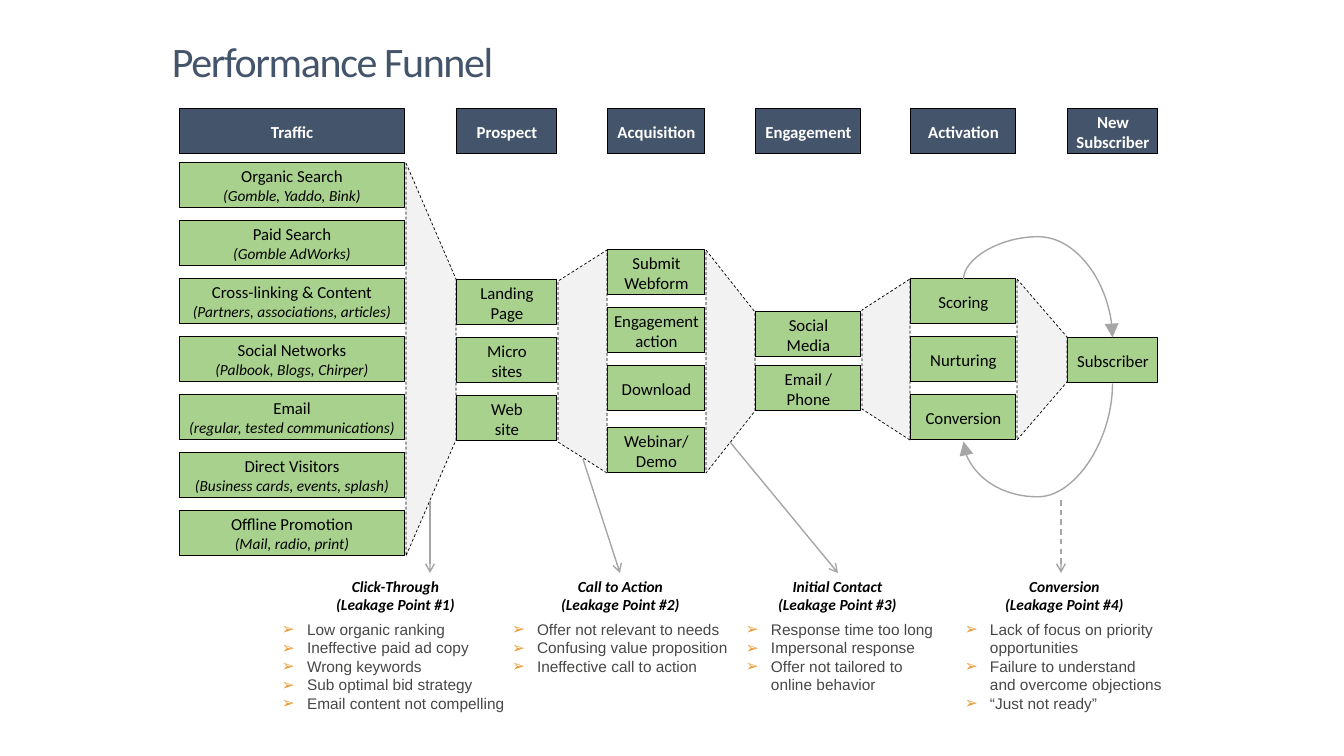
"""Builds the Performance Funnel slide: stage columns, funnels between them and leakage points."""
from lxml import etree
from pptx import Presentation
from pptx.dml.color import RGBColor
from pptx.enum.dml import MSO_LINE
from pptx.enum.shapes import MSO_CONNECTOR, MSO_SHAPE
from pptx.enum.text import MSO_ANCHOR, MSO_AUTO_SIZE, PP_ALIGN
from pptx.oxml.ns import qn
from pptx.util import Emu, Pt

RECT, TRAPEZOID = MSO_SHAPE.RECTANGLE, MSO_SHAPE.TRAPEZOID
STRAIGHT, CURVE = MSO_CONNECTOR.STRAIGHT, MSO_CONNECTOR.CURVE
TOP, MIDDLE, BOTTOM = MSO_ANCHOR.TOP, MSO_ANCHOR.MIDDLE, MSO_ANCHOR.BOTTOM
LEFT, CENTER = PP_ALIGN.LEFT, PP_ALIGN.CENTER
NO_FIT, DASH = MSO_AUTO_SIZE.NONE, MSO_LINE.DASH

EMU_PER_PX = 914400 / 100.8
BOX_HEIGHT, HEADER_TOP, CAPTION_TOP, LIST_TOP = 45, 109, 573, 615
THEME = {
    "header": "44546A", "step": "A9D18E", "funnel": "F2F2F2",
    "outline": "000000", "arrow": "A6A6A6", "bullet": "EB9931",
    "outline_width": Pt(0.75), "funnel_width": Pt(0.5), "arrow_width": Pt(1),
    "title_text": ("44546A", {"name": "Calibri", "size": Pt(30), "bold": False}),
    "header_text": ("FFFFFF", {"name": "Calibri", "size": Pt(12), "bold": True}),
    "step_text": ("000000", {"name": "Calibri", "size": Pt(12)}),
    "detail_text": ("000000", {"name": "Calibri", "size": Pt(11), "italic": True}),
    "caption_text": ("000000", {"name": "Calibri", "size": Pt(11), "bold": True, "italic": True}),
    "list_text": ("474746", {"name": "Arial", "size": Pt(11), "bold": False}),
}


def px(length):
    return Emu(round(length * EMU_PER_PX))


def write(shape, lines, style, anchor=MIDDLE, align=CENTER, inset=(10, 5)):
    frame = shape.text_frame
    frame.text = "\n".join(lines)
    across, down = map(px, inset)
    frame_format = {
        "word_wrap": True, "auto_size": NO_FIT, "vertical_anchor": anchor,
        "margin_left": across, "margin_right": across,
        "margin_top": down, "margin_bottom": down,
    }
    for attribute, value in frame_format.items():
        setattr(frame, attribute, value)
    for paragraph in frame.paragraphs:
        for attribute, value in {"alignment": align, "line_spacing": 1.0, "space_before": Pt(0)}.items():
            setattr(paragraph, attribute, value)
        detail = style == "step_text" and paragraph.text.startswith("(")
        color, font_format = THEME["detail_text" if detail else style]
        font = paragraph.runs[0].font
        font.color.rgb = RGBColor.from_string(color)
        for attribute, value in font_format.items():
            setattr(font, attribute, value)
    return frame.paragraphs


presentation = Presentation()
presentation.slide_width, presentation.slide_height = px(1344), px(756)
slide = presentation.slides.add_slide(presentation.slide_layouts.get_by_name("Comparison"))
title, *leak_lists = slide.placeholders
title.left, title.top, title.width, title.height = map(px, (162, 20, 840, 71))
title_line, = write(title, ["Performance Funnel"], "title_text", BOTTOM, LEFT)
title_line.runs[0]._r.get_or_add_rPr().set("spc", "-100")

stages = [
    ("Traffic", 179, 226, 0, range(163, 512, 58), [
        ["Organic Search", "(Gomble, Yaddo, Bink)"],
        ["Paid Search", "(Gomble AdWorks)"],
        ["Cross-linking & Content", "(Partners, associations, articles)"],
        ["Social Networks", "(Palbook, Blogs, Chirper)"],
        ["Email", "(regular, tested communications)"],
        ["Direct Visitors", "(Business cards, events, splash)"],
        ["Offline Promotion", "(Mail, radio, print)"]]),
    ("Prospect", 457, 100, 10, range(280, 397, 58),
     [["Landing", "Page"], ["Micro", "sites"], ["Web", "site"]]),
    ("Acquisition", 608, 97, 0, (250, 308, 366, 428),
     [["Submit", "Webform"], ["Engagement action"], ["Download"], ["Webinar/", "Demo"]]),
    ("Engagement", 756, 105, 10, (312, 366), [["Social Media"], ["Email / Phone"]]),
    ("Activation", 911, 105, 0, range(279, 396, 58), [["Scoring"], ["Nurturing"], ["Conversion"]]),
    ("New Subscriber", 1068, 90, 0, (338,), [["Subscriber"]]),
]
for stage, left, width, inset, tops, steps in stages:
    boxes = [(HEADER_TOP, [stage], "header", 0)]
    boxes += [(top, step, "step", inset) for top, step in zip(tops, steps)]
    for top, lines, role, side in boxes:
        box = slide.shapes.add_shape(RECT, px(left), px(top), px(width), px(BOX_HEIGHT))
        box.shadow.inherit = False
        box.fill.solid()
        box.fill.fore_color.rgb = RGBColor.from_string(THEME[role])
        box.line.color.rgb = RGBColor.from_string(THEME["outline"])
        box.line.width = THEME["outline_width"]
        write(box, lines, f"{role}_text", inset=(side, 0))

for before, after in zip(stages, stages[1:]):
    start, depth = before[1] + before[2] + 1, after[1] - before[1] - before[2] - 2
    heights = [stage[4][-1] + BOX_HEIGHT - stage[4][0] for stage in (before, after)]
    tall, short = max(heights), min(heights)
    tall_stage = before if heights[0] == tall else after
    middle = tall_stage[4][0] + tall / 2
    funnel = slide.shapes.add_shape(
        TRAPEZOID, px(start + depth / 2 - tall / 2), px(middle - depth / 2), px(tall), px(depth))
    funnel.rotation = 90 if tall_stage is before else 270
    funnel.adjustments[0] = (tall - short) / 2 / depth
    funnel.shadow.inherit = False
    funnel.fill.solid()
    funnel.fill.fore_color.rgb = RGBColor.from_string(THEME["funnel"])
    funnel.line.color.rgb = RGBColor.from_string(THEME["outline"])
    funnel.line.width = THEME["funnel_width"]
    funnel.line.dash_style = DASH

leaks = [
    (["Click-Through", "(Leakage Point #1)"], 305, 181, 272, 247,
     ["Low organic ranking", "Ineffective paid ad copy", "Wrong keywords",
      "Sub optimal bid strategy", "Email content not compelling"]),
    (["Call to Action", "(Leakage Point #2)"], 522, 197, 502, 236,
     ["Offer not relevant to needs", "Confusing value proposition", "Ineffective call to action"]),
    (["Initial Contact", "(Leakage Point #3)"], 740, 195, 736, 222,
     ["Response time too long", "Impersonal response", "Offer not tailored to online behavior"]),
    (["Conversion", "(Leakage Point #4)"], 967, 195, 955, 220,
     ["Lack of focus on priority opportunities", "Failure to understand and overcome objections",
      "“Just not ready”"]),
]
for leak_list, (heading, left, width, list_left, list_width, causes) in zip(leak_lists, leaks):
    caption = slide.shapes.add_textbox(px(left), px(CAPTION_TOP), px(width), px(BOX_HEIGHT))
    write(caption, heading, "caption_text")
    leak_list.left, leak_list.top = px(list_left), px(LIST_TOP)
    leak_list.width, leak_list.height = px(list_width), px(104)
    for cause in write(leak_list, causes, "list_text", TOP, LEFT):
        properties = cause._p.get_or_add_pPr()
        properties.set("marL", str(px(25)))
        properties.set("indent", str(-px(25)))
        bullet_color = etree.SubElement(properties, qn("a:buClr"))
        etree.SubElement(bullet_color, qn("a:srgbClr"), val=THEME["bullet"])
        etree.SubElement(properties, qn("a:buFont"), typeface="Arial")
        etree.SubElement(properties, qn("a:buChar"), char="➢")

arrows = [
    (STRAIGHT, (730, 442, 838, 573), "tailEnd", "arrow", None, 0, None),
    (STRAIGHT, (583, 459, 620, 573), "tailEnd", "arrow", None, 0, None),
    (STRAIGHT, (430, 501, 430, 573), "tailEnd", "arrow", None, 0, None),
    (STRAIGHT, (1061, 500, 1061, 573), "tailEnd", "arrow", DASH, 0, None),
    (CURVE, (1067, 487, 1009, 338), "headEnd", "triangle", None, 90, -95400),
    (CURVE, (1067, 234, 1009, 383), "tailEnd", "triangle", None, 270, -73800),
]
for kind, ends, tip_end, tip, dash, turn, bend in arrows:
    arrow = slide.shapes.add_connector(kind, *map(px, ends))
    arrow.line.color.rgb = RGBColor.from_string(THEME["arrow"])
    arrow.line.width = THEME["arrow_width"]
    arrow.line.dash_style = dash
    properties = arrow._element.spPr
    tip_size = {"w": "lg", "len": "lg"} if tip == "triangle" else {}
    etree.SubElement(properties.find(qn("a:ln")), qn(f"a:{tip_end}"), type=tip, **tip_size)
    etree.SubElement(properties, qn("a:effectLst"))
    if bend:
        properties.find(qn("a:xfrm")).set("rot", str(turn * 60000))
        guides = properties.find(qn("a:prstGeom")).find(qn("a:avLst"))
        etree.SubElement(guides, qn("a:gd"), name="adj1", fmla=f"val {bend}")

presentation.save("out.pptx")
